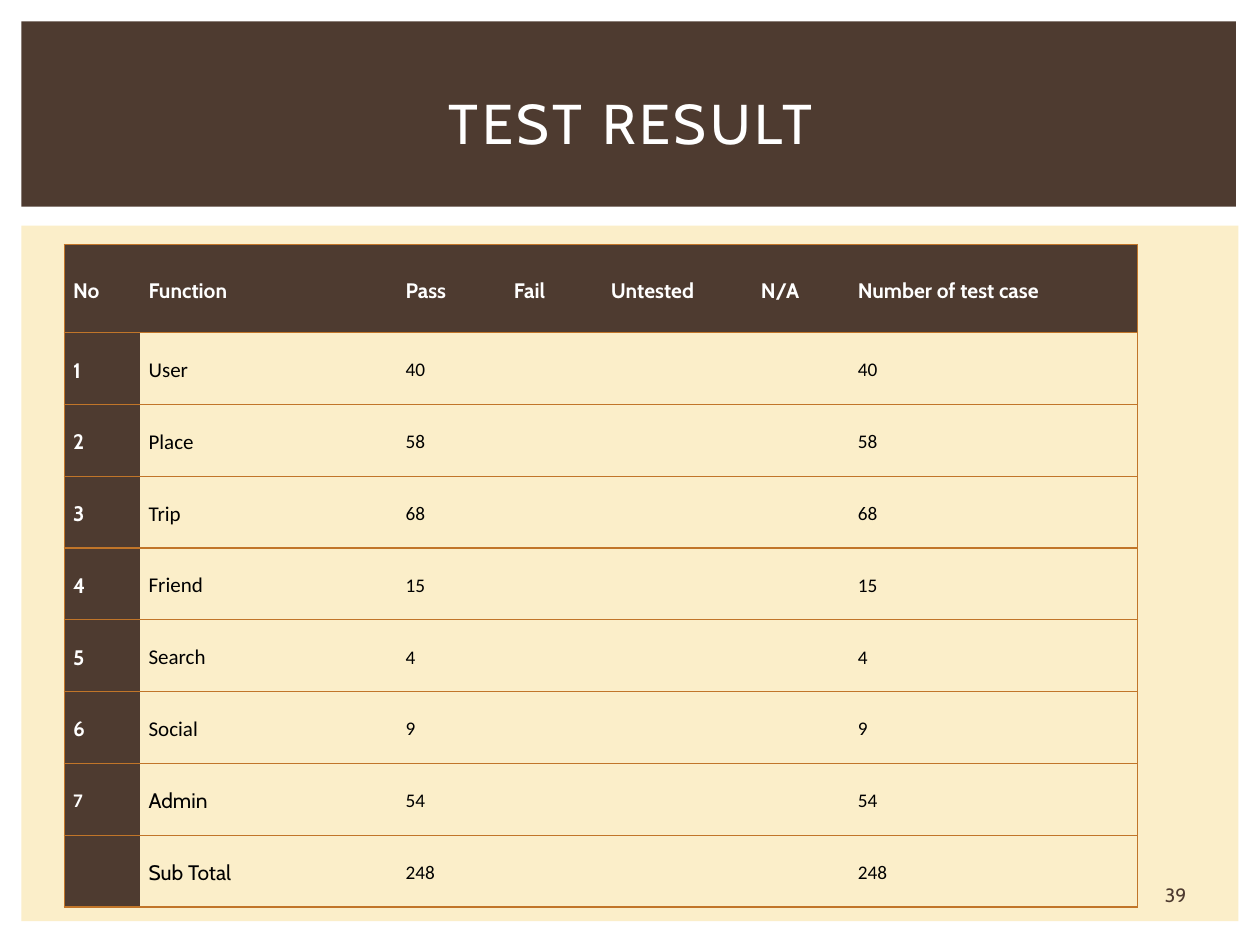
from lxml import etree
from pptx import Presentation
from pptx.dml.color import RGBColor
from pptx.enum.shapes import MSO_SHAPE
from pptx.enum.text import MSO_ANCHOR, PP_ALIGN
from pptx.oxml.ns import qn
from pptx.util import Inches, Pt

RECT = MSO_SHAPE.RECTANGLE
MID = MSO_ANCHOR.MIDDLE
LEFT = PP_ALIGN.LEFT
CENTER = PP_ALIGN.CENTER

BROWN = "4E3B30"
CREAM = "FBEEC9"
RUST = "C17529"
WHITE = "FFFFFF"
BLACK = "000000"

HEADS = ["No", "Function", "Pass", "Fail", "Untested", "N/A", "Number of test case"]
TESTS = [("User", 40), ("Place", 58), ("Trip", 68), ("Friend", 15),
         ("Search", 4), ("Social", 9), ("Admin", 54)]
COLS = [6, 20.4, 8.6, 7.7, 11.9, 7.7, 22.9]
ROWS = [7] + [5.7] * (len(TESTS) + 1)


def color(code):
    return RGBColor.from_string(code)


def write(frame, text, size=12, font="Cabin", ink=BLACK, bold=False,
          align=LEFT, track=0, lead=None, above=None):
    para = frame.paragraphs[0]
    para.alignment = align
    para.line_spacing = lead
    para.space_before = above
    run = para.add_run()
    run.text = text
    run.font.size = Pt(size)
    run.font.name = font
    run.font.bold = bold
    run.font.color.rgb = color(ink)
    if track:
        run.font._element.set("spc", str(track * 100))


class Deck:
    def __init__(self, width=10, height=7.5, cols=100, rows=75):
        self.show = Presentation()
        self.show.slide_width = Inches(width)
        self.show.slide_height = Inches(height)
        self.col = self.show.slide_width / cols
        self.row = self.show.slide_height / rows
        self.slide = self.show.slides.add_slide(self.show.slide_layouts[6])

    def place(self, left, top, wide, high):
        return (int(left * self.col), int(top * self.row),
                int(wide * self.col), int(high * self.row))

    def panel(self, spot, fill):
        shape = self.slide.shapes.add_shape(RECT, *self.place(*spot))
        shape.shadow.inherit = False
        shape.fill.solid()
        shape.fill.fore_color.rgb = color(fill)
        shape.line.fill.background()

    def label(self, spot, text, **style):
        frame = self.slide.shapes.add_textbox(*self.place(*spot)).text_frame
        frame.word_wrap = True
        frame.vertical_anchor = MID
        write(frame, text, align=CENTER, **style)

    def edge(self, cell, side, shown):
        line = etree.SubElement(cell._tc.get_or_add_tcPr(), qn("a:ln" + side))
        if shown:
            line.set("w", str(Pt(0.79)))
            fill = etree.SubElement(line, qn("a:solidFill"))
            etree.SubElement(fill, qn("a:srgbClr")).set("val", RUST)
        else:
            line.set("w", "0")
            etree.SubElement(line, qn("a:noFill"))

    def cell(self, cell, text, fill, sides, **style):
        for side in "LRTB":
            self.edge(cell, side, side in sides)
        cell.margin_left = cell.margin_right = Inches(0.07)
        cell.margin_top = cell.margin_bottom = 0
        cell.vertical_anchor = MID
        if fill:
            cell.fill.solid()
            cell.fill.fore_color.rgb = color(fill)
        else:
            cell.fill.background()
        if text:
            write(cell.text_frame, text, lead=1.15, above=Pt(6), **style)

    def table(self, left, top, cols, rows, data, style):
        spot = self.place(left, top, sum(cols), sum(rows))
        grid = self.slide.shapes.add_table(len(rows), len(cols), *spot).table
        for item, wide in zip(grid.columns, cols):
            item.width = int(wide * self.col)
        for item, high in zip(grid.rows, rows):
            item.height = int(high * self.row)
        last = len(cols) - 1
        for r, line in enumerate(data):
            for c, text in enumerate(line):
                sides = "TB" + "L" * (c == 0) + "R" * (c == last)
                fill = BROWN if r == 0 or c == 0 else None
                self.cell(grid.cell(r, c), text, fill, sides, **style(r, c))


def style(r, c):
    if r == 0 or c == 0:
        look = {"ink": WHITE, "bold": True}
        if r == len(TESTS):
            look.update(size=11, font="Calibri")
        return look
    if c == 1:
        return {"font": "Calibri" if r < len(TESTS) else "Cabin"}
    return {"size": 11, "font": "Calibri"}


def line(no, name, count):
    return [no, name, str(count), "", "", "", str(count)]


def main():
    data = [HEADS]
    data += [line(str(i), *test) for i, test in enumerate(TESTS, 1)]
    data.append(line("", "Sub Total", sum(count for _, count in TESTS)))

    deck = Deck()
    deck.panel((1.7, 17.9, 96.6, 55.2), CREAM)
    deck.panel((1.7, 1.7, 96.4, 14.7), BROWN)
    deck.label((4.2, 3.9, 91.7, 11.5), "TEST RESULT", size=32, ink=WHITE, track=2)
    deck.table(5.1, 19.4, COLS, ROWS, data, style)
    deck.label((90.1, 69.5, 6.4, 3), "39", size=11, ink=BROWN)
    deck.show.save("out.pptx")


if __name__ == "__main__":
    main()
